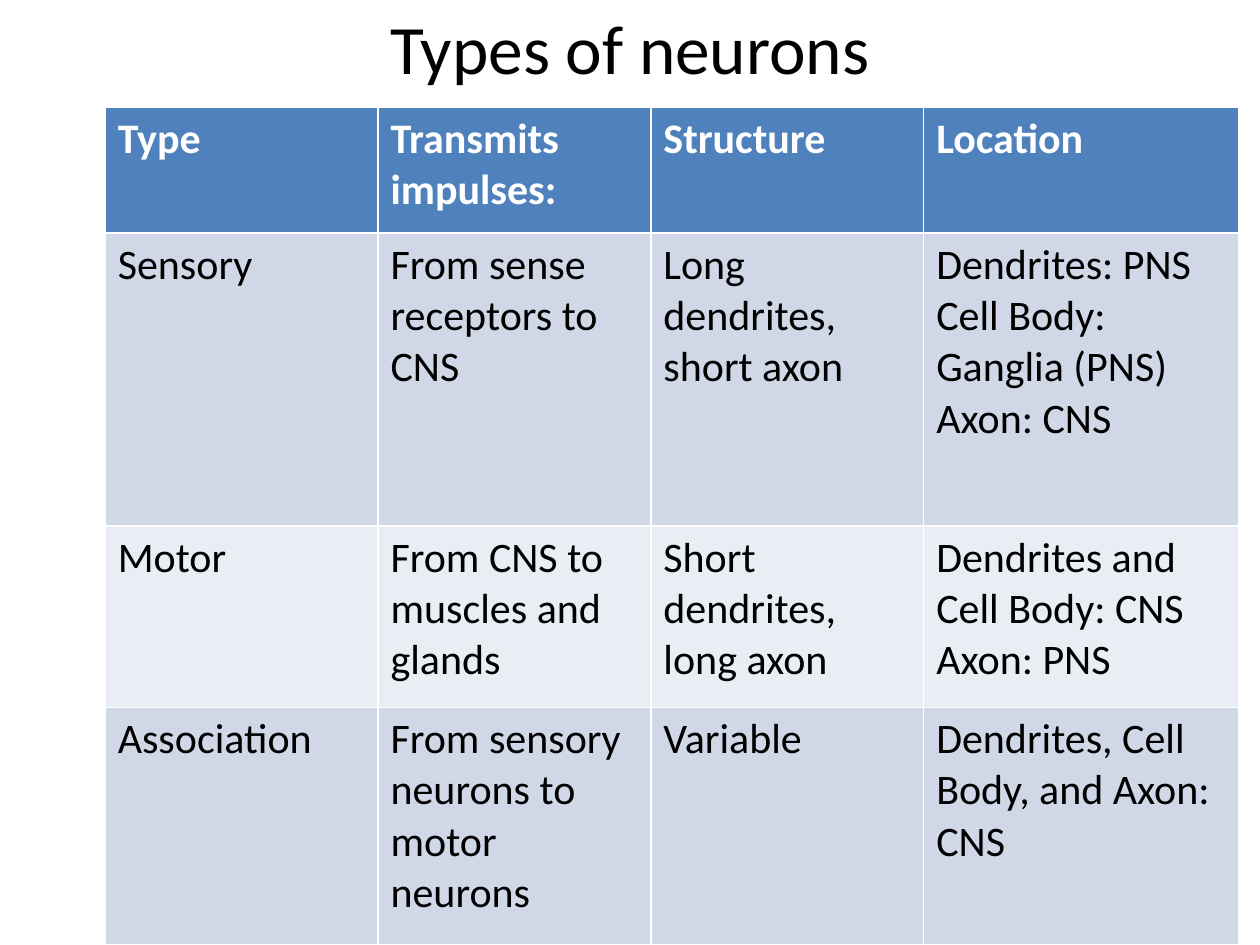
from pptx import Presentation
from pptx.dml.color import RGBColor
from pptx.enum.text import MSO_ANCHOR, PP_ALIGN
from pptx.util import Cm, Pt


def style_paragraph(paragraph, size, color, bold=False):
    font = paragraph.font
    font.name = "Calibri"
    font.size = Pt(size)
    font.bold = bold
    font.color.rgb = RGBColor.from_string(color)


presentation = Presentation()
presentation.slide_width = Cm(25.4)
presentation.slide_height = Cm(19.05)
slide = presentation.slides.add_slide(presentation.slide_layouts[6])

# Title
title = slide.shapes.add_textbox(Cm(1.27), Cm(0), Cm(22.86), Cm(1.9))
title_frame = title.text_frame
title_frame.word_wrap = True
title_frame.vertical_anchor = MSO_ANCHOR.MIDDLE
title_frame.text = "Types of neurons"
title_paragraph = title_frame.paragraphs[0]
title_paragraph.alignment = PP_ALIGN.CENTER
style_paragraph(title_paragraph, 39.6, "000000")

# Neuron table: a line break inside a cell starts a new paragraph
neuron_rows = [
    ["Type", "Transmits impulses:", "Structure", "Location"],
    ["Sensory", "From sense receptors to CNS", "Long dendrites, short axon",
     "Dendrites: PNS\nCell Body: Ganglia (PNS)\nAxon: CNS"],
    ["Motor", "From CNS to muscles and glands", "Short dendrites, long axon",
     "Dendrites and Cell Body: CNS\nAxon: PNS"],
    ["Association", "From sensory neurons to motor neurons", "Variable",
     "Dendrites, Cell Body, and Axon: CNS"],
]
column_widths = [5.5, 5.5, 5.5, 6.35]
row_heights = [2.54, 5.9, 3.66, 4.78]
row_fills = ["4F81BD", "D0D8E8", "E9EDF4", "D0D8E8"]

# The default table style supplies the white cell borders
table = slide.shapes.add_table(
    len(neuron_rows), len(column_widths), Cm(2.12), Cm(2.16),
    Cm(sum(column_widths)), Cm(sum(row_heights))).table
for column, width in zip(table.columns, column_widths):
    column.width = Cm(width)

for row, height, fill, texts in zip(table.rows, row_heights, row_fills, neuron_rows):
    row.height = Cm(height)
    is_header = texts is neuron_rows[0]
    for cell, text in zip(row.cells, texts):
        cell.text = text
        cell.fill.solid()
        cell.fill.fore_color.rgb = RGBColor.from_string(fill)
        for paragraph in cell.text_frame.paragraphs:
            style_paragraph(paragraph, 24, "FFFFFF" if is_header else "000000", is_header)

presentation.save("out.pptx")
